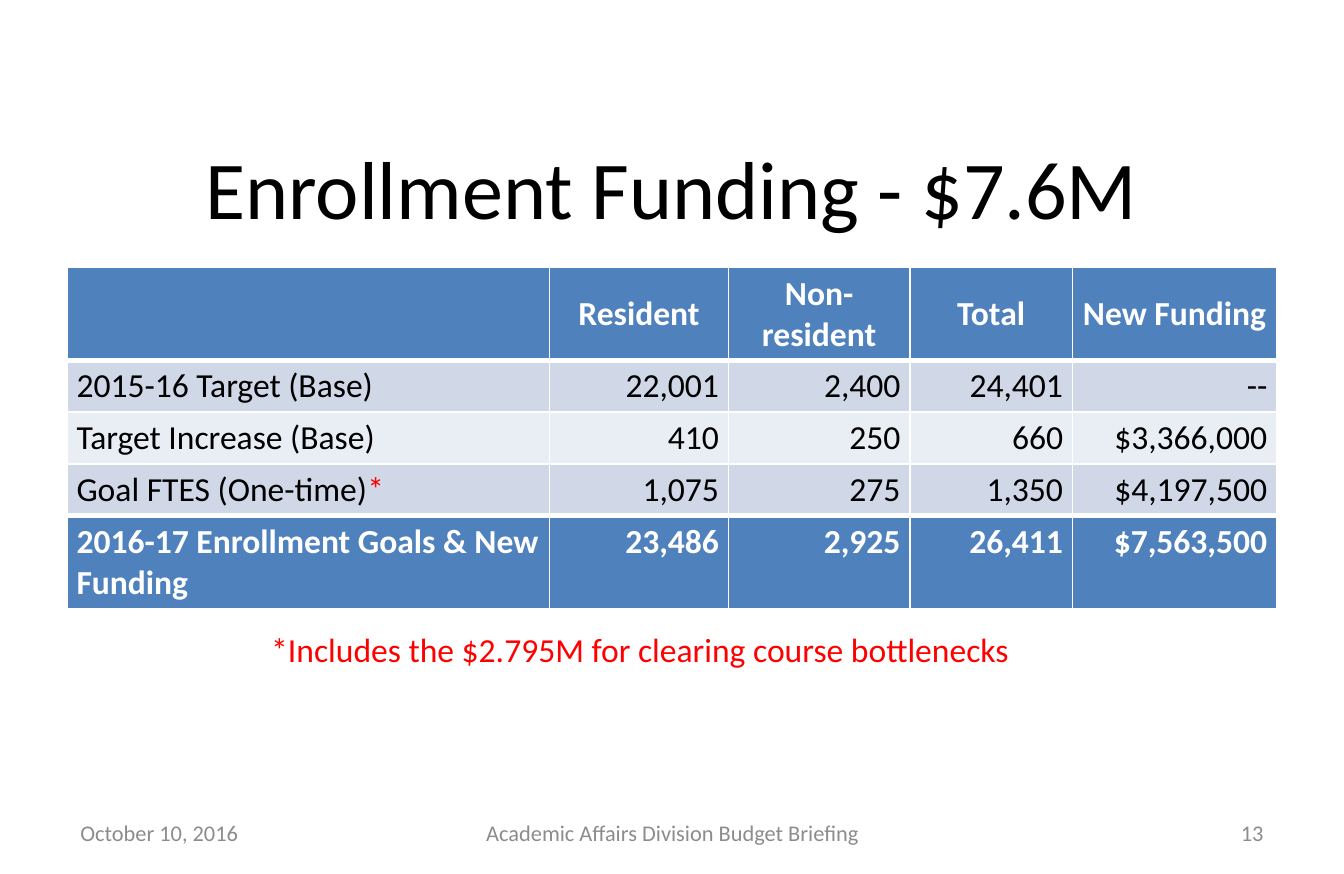
from lxml import etree
from pptx import Presentation
from pptx.dml.color import RGBColor
from pptx.enum.text import MSO_ANCHOR, PP_ALIGN
from pptx.oxml.ns import qn
from pptx.util import Inches, Pt

LEFT, CENTER, RIGHT = PP_ALIGN.LEFT, PP_ALIGN.CENTER, PP_ALIGN.RIGHT
TOP, MIDDLE = MSO_ANCHOR.TOP, MSO_ANCHOR.MIDDLE
GRID_COLUMNS, GRID_ROWS = 20, 13
BLACK, WHITE, RED, GRAY = "000000", "FFFFFF", "FF0000", "8C8C8C"
BLUE, BANDS = "4F81BD", ("D0D8E8", "E9EDF4")
TITLE_ONLY = 5

ENROLLMENT = [
    ["", "Resident", "Non-resident", "Total", "New Funding"],
    ["2015-16 Target (Base)", "22,001", "2,400", "24,401", "--"],
    ["Target Increase (Base)", "410", "250", "660", "$3,366,000"],
    ["Goal FTES (One-time)*", "1,075", "275", "1,350", "$4,197,500"],
    ["2016-17 Enrollment Goals & New Funding", "23,486", "2,925", "26,411", "$7,563,500"],
]
COLUMN_SPANS = [7.18, 2.66, 2.7, 2.42, 3.04]
ROW_SPANS = [1.34, 0.76, 0.76, 0.76, 1.34]


def color(hex_text):
    return RGBColor.from_string(hex_text)


class SlideBuilder:
    """Holds the style and the current slide; lengths are grid columns and rows."""

    font_name = "Calibri"

    def __init__(self, deck):
        self.column = deck.slide_width / GRID_COLUMNS
        self.row = deck.slide_height / GRID_ROWS
        self.slide = deck.slides.add_slide(deck.slide_layouts[TITLE_ONLY])

    def area(self, left, top, width, height):
        return (round(left * self.column), round(top * self.row),
                round(width * self.column), round(height * self.row))

    def fill_text(self, frame, text, size, ink, align=LEFT, bold=False):
        """Fill a text frame with one paragraph; a closing asterisk turns red."""
        para = frame.paragraphs[0]
        para.alignment = align
        font = para.font
        font.name, font.size, font.bold = self.font_name, Pt(size), bold
        font.color.rgb = color(ink)
        label = text.removesuffix("*")
        if label:
            para.add_run().text = label
        if label != text:
            mark = para.add_run()
            mark.text = "*"
            mark.font.color.rgb = color(RED)

    def title(self, text, *place):
        box = self.slide.shapes.title
        box.left, box.top, box.width, box.height = self.area(*place)
        box.text_frame.vertical_anchor = MIDDLE
        self.fill_text(box.text_frame, text, 44, BLACK, CENTER)

    def text(self, text, *place, size, ink, align=LEFT, anchor=MIDDLE, wrap=True):
        frame = self.slide.shapes.add_textbox(*self.area(*place)).text_frame
        frame.word_wrap = wrap
        frame.vertical_anchor = anchor
        self.fill_text(frame, text, size, ink, align)

    def borders(self, cell, top, bottom):
        """Draw white cell borders, with top and bottom widths in points."""
        properties = cell._tc.get_or_add_tcPr()
        for side, width in (("L", 1), ("R", 1), ("T", top), ("B", bottom)):
            line = etree.SubElement(properties, qn(f"a:ln{side}"), w=str(Pt(width)))
            fill = etree.SubElement(line, qn("a:solidFill"))
            etree.SubElement(fill, qn("a:srgbClr"), val=WHITE)

    def table(self, rows, column_spans, row_spans, left, top):
        place = self.area(left, top, sum(column_spans), sum(row_spans))
        table = self.slide.shapes.add_table(len(rows), len(column_spans), *place).table
        table.first_row = table.horz_banding = False
        for column, span in zip(table.columns, column_spans):
            column.width = round(span * self.column)
        for row, span in zip(table.rows, row_spans):
            row.height = round(span * self.row)
        last = len(rows) - 1
        for r, values in enumerate(rows):
            strong = r in (0, last)
            for c, value in enumerate(values):
                cell = table.cell(r, c)
                cell.margin_left = cell.margin_right = Inches(0.07)
                cell.margin_top = cell.margin_bottom = Inches(0.04)
                cell.vertical_anchor = TOP if r else MIDDLE
                self.borders(cell, top=3 if r in (1, last) else 1,
                             bottom=3 if r in (0, last - 1) else 1)
                cell.fill.solid()
                cell.fill.fore_color.rgb = color(BLUE if strong else BANDS[(r - 1) % 2])
                align = CENTER if r == 0 else RIGHT if c else LEFT
                self.fill_text(cell.text_frame, value, 18, WHITE if strong else BLACK,
                               align, strong)


def main():
    deck = Presentation()
    deck.slide_width, deck.slide_height = Inches(10), Inches(6.5)
    page = SlideBuilder(deck)
    page.title("Enrollment Funding - $7.6M", 1, 1.76, 18, 2.02)
    page.table(ENROLLMENT, COLUMN_SPANS, ROW_SPANS, 1, 3.98)
    page.text("*Includes the $2.795M for clearing course bottlenecks",
              3.84, 9.26, 11.52, 0.8, size=18, ink=RED, anchor=TOP, wrap=False)
    footer = [
        ("October 10, 2016", 1, 4.66, LEFT),
        ("Academic Affairs Division Budget Briefing", 6.84, 6.34, CENTER),
        ("13", 14.34, 4.66, RIGHT),
    ]
    for text, left, width, align in footer:
        page.text(text, left, 12.04, width, 0.7, size=12, ink=GRAY, align=align)
    deck.save("out.pptx")


if __name__ == "__main__":
    main()
